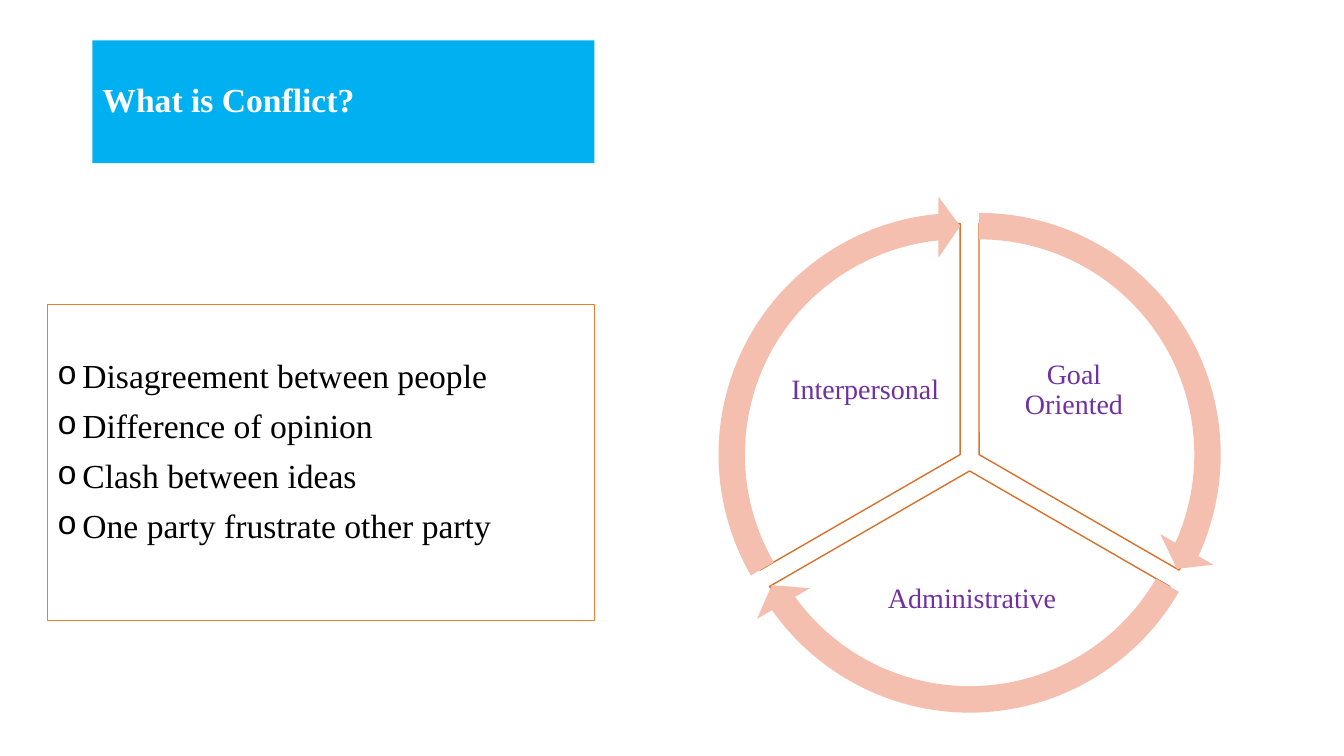
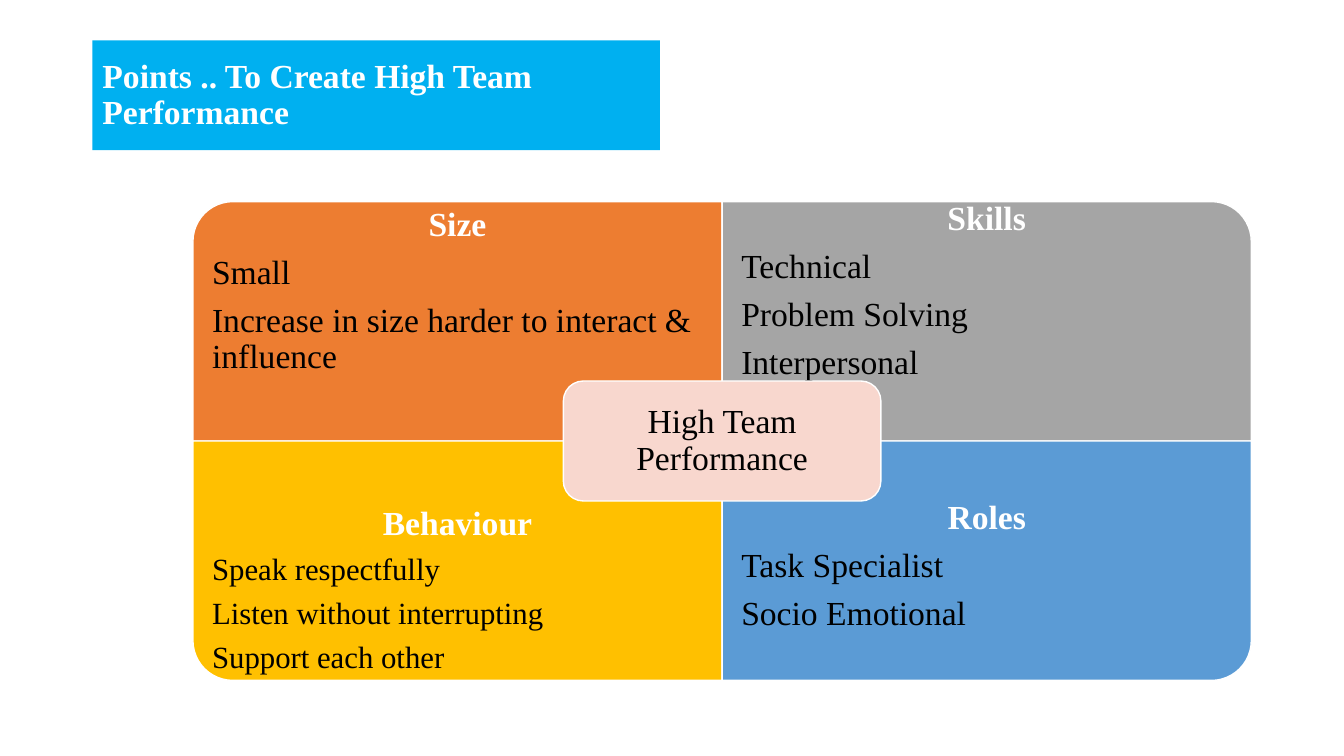
import math

import pptx
import pptx.chart.data
import pptx.dml.color
import pptx.enum.shapes
import pptx.enum.text
import pptx.util
import lxml.etree

Pt = pptx.util.Pt
SHAPE = pptx.enum.shapes.MSO_SHAPE
ALIGN = pptx.enum.text.PP_ALIGN
ANCHOR = pptx.enum.text.MSO_ANCHOR

FONT = "Times New Roman"
HEX = {
    "title": "00B0F0", "white": "FFFFFF", "black": "000000",
    "frame": "ED7D31", "wedge": "D7712C", "label": "7030A0", "arrow": "F4BFAE",
    "size": "ED7D31", "skills": "A5A5A5", "manner": "FFC000", "roles": "5B9BD5",
    "core": "F8D7CE",
}

POINTS = [
    "Disagreement between people",
    "Difference of opinion",
    "Clash between ideas",
    "One party frustrate other party",
]
KINDS = [
    ("Goal Oriented", (708.5, 229.7, 117.4, 97.9)),
    ("Administrative", (606.2, 385.2, 176.4, 86.4)),
    ("Interpersonal", (559.4, 229.7, 117.4, 97.9)),
]
QUADS = [
    ("Size", ["Small", "Increase in size harder to interact & influence"],
     dict(fill="size", turn=270, size=24, lift=0)),
    ("Skills", ["Technical", "Problem Solving", "Interpersonal"],
     dict(fill="skills", turn=0, size=24, lift=0)),
    ("Behaviour", ["Speak respectfully", "Listen without interrupting", "Support each other"],
     dict(fill="manner", turn=180, size=22, lift=0)),
    ("Roles", ["Task Specialist", "Socio Emotional"],
     dict(fill="roles", turn=90, size=24, lift=17)),
]


def tint(name):
    return pptx.dml.color.RGBColor.from_string(HEX[name])


def write(frame, text, size=24, color="black", bold=False, align=ALIGN.LEFT,
          before=0, after=0, bullet=None):
    para = frame.paragraphs[0]
    if para.runs:
        para = frame.add_paragraph()
    para.alignment = align
    para.line_spacing = 0.9
    para.space_before = Pt(before)
    para.space_after = Pt(after)
    run = para.add_run()
    run.text = text
    run.font.name = FONT
    run.font.size = Pt(size)
    run.font.bold = bold
    run.font.color.rgb = tint(color)
    if bullet:
        props = para._p.get_or_add_pPr()
        props.set("marL", str(Pt(18)))
        props.set("indent", str(Pt(-18)))
        space = pptx.oxml.ns.qn
        lxml.etree.SubElement(props, space("a:buFont")).set("typeface", "Courier New")
        lxml.etree.SubElement(props, space("a:buChar")).set("char", bullet)


def setup(frame, side=7.2, top=3.6, anchor=ANCHOR.MIDDLE):
    frame.word_wrap = True
    frame.auto_size = pptx.enum.text.MSO_AUTO_SIZE.NONE
    frame.vertical_anchor = anchor
    frame.margin_left = frame.margin_right = Pt(side)
    frame.margin_top = Pt(top)
    frame.margin_bottom = Pt(3.6)
    return frame


def draw(slide, kind, box, fill=None, line=None, width=1):
    shape = slide.shapes.add_shape(kind, *map(Pt, box))
    shape.shadow.inherit = False
    if fill:
        shape.fill.solid()
        shape.fill.fore_color.rgb = tint(fill)
    else:
        shape.fill.background()
    if line:
        shape.line.color.rgb = tint(line)
        shape.line.width = Pt(width)
    else:
        shape.line.fill.background()
    return shape


def label(slide, box, side):
    return setup(slide.shapes.add_textbox(*map(Pt, box)).text_frame, side=side)


def start(deck, text, width, height):
    slide = deck.slides.add_slide(deck.slide_layouts[5])
    title = slide.shapes.title
    title.left, title.top, title.width, title.height = map(Pt, (66, 28.8, width, height))
    title.fill.solid()
    title.fill.fore_color.rgb = tint("title")
    write(setup(title.text_frame), text, color="white", bold=True)
    return slide


def around(mid, radius):
    return mid[0] - radius, mid[1] - radius, 2 * radius, 2 * radius


def angle(degrees):
    return degrees % 360 * 0.6


def conflict(deck):
    slide = start(deck, "What is Conflict?", 358.6, 87.8)
    card = draw(slide, SHAPE.RECTANGLE, (33.8, 217.4, 391, 226), line="frame", width=0.75)
    frame = setup(card.text_frame, top=39, anchor=ANCHOR.TOP)
    for row, text in enumerate(POINTS):
        write(frame, text, before=10 if row else 0, bullet="o")

    hub, gap, sweep, tip = (692.6, 328.6), 7.8, 120, 5.46
    parts = []
    for step, (text, box) in enumerate(KINDS):
        first = 270 + sweep * step
        way = math.radians(first + sweep / 2)
        mid = hub[0] + gap * math.cos(way), hub[1] + gap * math.sin(way)
        parts.append((mid, first))
        pie = draw(slide, SHAPE.PIE, around(mid, 165), fill="white", line="wedge")
        pie.adjustments[0] = angle(first)
        pie.adjustments[1] = angle(first + sweep)
        write(label(slide, box, 2), text, size=20, color="label", align=ALIGN.CENTER)
    for mid, first in parts:
        arrow = draw(slide, SHAPE.CIRCULAR_ARROW, around(mid, 185), fill="arrow")
        values = 0.051, angle(tip), angle(first + sweep - tip), angle(first), 0.059
        for spot, value in enumerate(values):
            arrow.adjustments[spot] = value


def team(deck):
    slide = start(deck, "Points .. To Create High Team Performance", 405.4, 78.5)
    left, top, wide, high, tall = 137.8, 144, 378, 171, 128.2
    for spot, (head, lines, look) in enumerate(QUADS):
        row, col = divmod(spot, 2)
        x, y = left + col * wide, top + row * high
        w, h = (high, wide) if look["turn"] % 180 else (wide, high)
        box = x + (wide - w) / 2, y + (high - h) / 2, w, h
        quad = draw(slide, SHAPE.ROUND_1_RECTANGLE, box, fill=look["fill"], line="white")
        quad.rotation = look["turn"]
        base = y + row * (high - tall) - look["lift"]
        frame = label(slide, (x, base, wide, tall), 13.7)
        write(frame, head, color="white", bold=True, align=ALIGN.CENTER, after=8.4)
        for text in lines:
            last = text == lines[-1]
            size = look["size"]
            write(frame, text, size=size, after=0 if last else 0.35 * size)
    w, h = 226.8, 85.7
    box = left + wide - w / 2, top + high - h / 2, w, h
    core = draw(slide, SHAPE.ROUNDED_RECTANGLE, box, fill="core", line="white")
    write(setup(core.text_frame, side=11.5), "High Team Performance", align=ALIGN.CENTER)


def main():
    deck = pptx.Presentation()
    deck.slide_width, deck.slide_height = Pt(960), Pt(540)
    conflict(deck)
    team(deck)
    deck.save("out.pptx")


if __name__ == "__main__":
    main()
